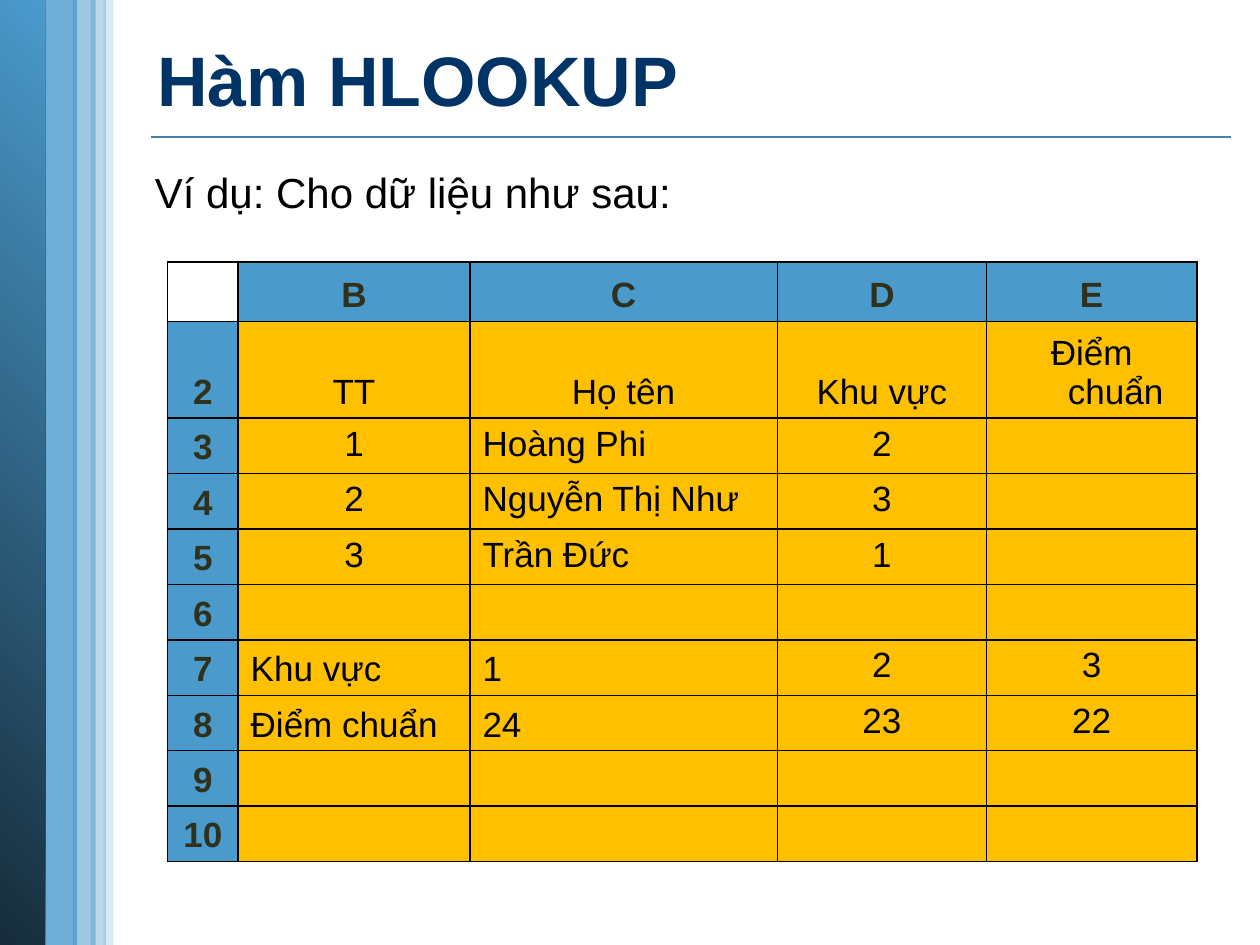
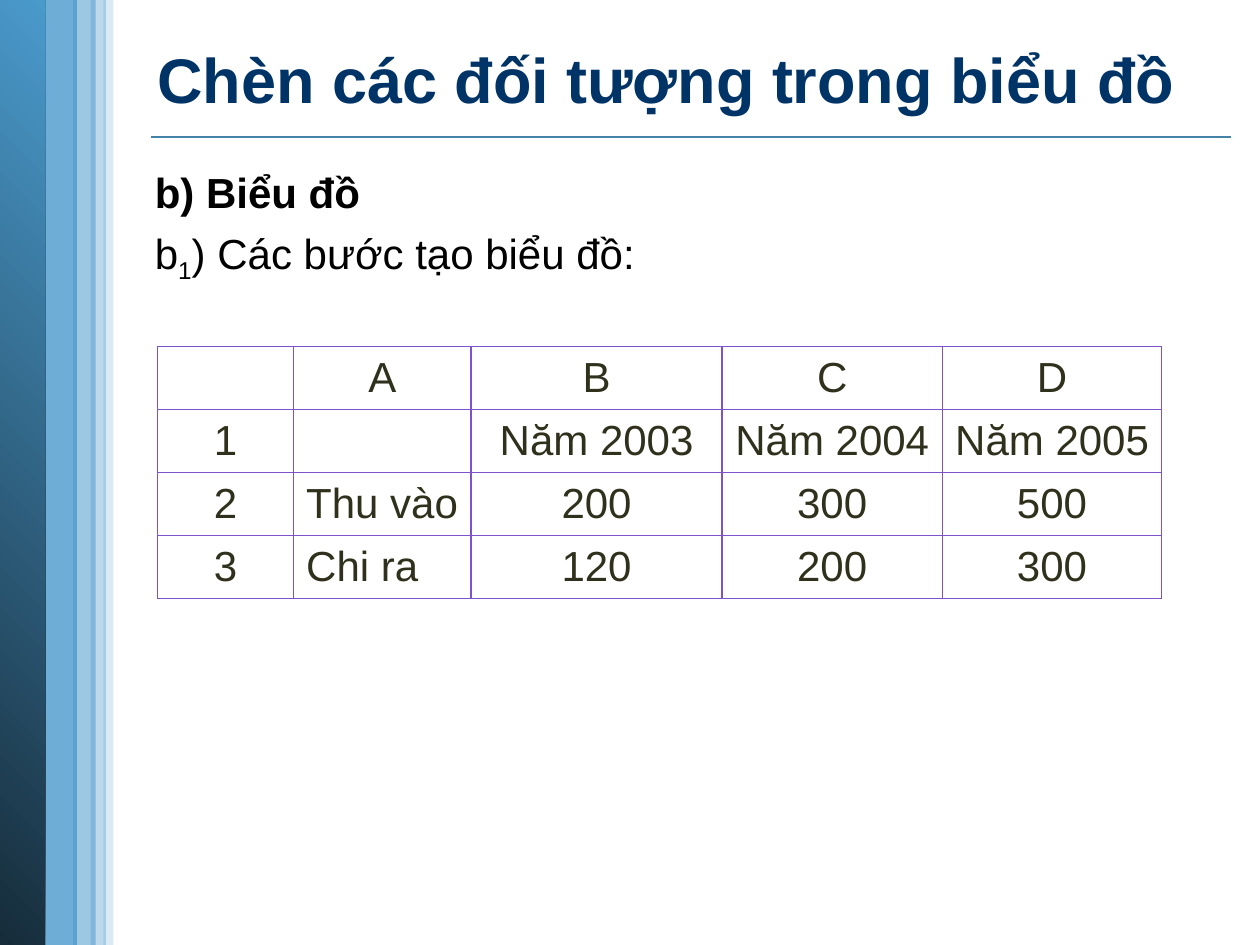
from dataclasses import dataclass
from lxml.etree import SubElement as Sub
from pptx import Presentation
from pptx.dml.color import RGBColor as RGB
from pptx.enum.shapes import MSO_CONNECTOR as Conn, MSO_SHAPE as Shape
from pptx.enum.text import MSO_ANCHOR as Anchor, PP_ALIGN as Align
from pptx.oxml.ns import qn
from pptx.util import Pt

PX = 9144
WIDE, HIGH = 1000, 750
FONT = "Arial"
BLUE = RGB(0x4A, 0x9A, 0xCC)
DARK = RGB(0x16, 0x2C, 0x3A)
RULE = RGB(0x45, 0x82, 0xA7)
NAVY = RGB(0x00, 0x33, 0x66)
BLACK = RGB(0x00, 0x00, 0x00)
OLIVE = RGB(0x30, 0x31, 0x1D)
GOLD = RGB(0xFF, 0xC0, 0x00)
VIOLET = RGB(0x7E, 0x52, 0xCC)
HANG = 38


@dataclass
class Look:
    """The style of one kind of table cell."""
    fill: RGB = None
    ink: RGB = OLIVE
    bold: bool = False
    anchor: Anchor = Anchor.MIDDLE
    align: Align = Align.CENTER
    hang: int = HANG


LOOKS = {
    ".": Look(),
    "s": Look(align=Align.LEFT),
    "h": Look(BLUE, bold=True, anchor=Anchor.BOTTOM),
    "c": Look(GOLD, BLACK, anchor=Anchor.BOTTOM),
    "t": Look(GOLD, BLACK, anchor=Anchor.TOP),
    "j": Look(GOLD, BLACK, anchor=Anchor.TOP, align=Align.JUSTIFY),
    "l": Look(GOLD, BLACK, anchor=Anchor.BOTTOM, align=Align.LEFT, hang=0),
}

SCORES = [
    (".hhhh", ["", "B", "C", "D", "E"]),
    ("hcccc", ["2", "TT", "Họ tên", "Khu vực", "Điểm chuẩn"]),
    ("htjtt", ["3", "1", "Hoàng Phi", "2", ""]),
    ("htjtt", ["4", "2", "Nguyễn Thị Như", "3", ""]),
    ("htjtt", ["5", "3", "Trần Đức", "1", ""]),
    ("htttt", ["6", "", "", "", ""]),
    ("hlltt", ["7", "Khu vực", "1", "2", "3"]),
    ("hlltt", ["8", "Điểm chuẩn", "24", "23", "22"]),
    ("htttt", ["9", "", "", "", ""]),
    ("htttt", ["10", "", "", "", ""]),
]
MONEY = [
    (".....", ["", "A", "B", "C", "D"]),
    (".....", ["1", "", "Năm 2003", "Năm 2004", "Năm 2005"]),
    (".s...", ["2", "Thu vào", "200", "300", "500"]),
    (".s...", ["3", "Chi ra", "120", "200", "300"]),
]


def scale(*nums):
    """Turn px into EMU."""
    return [n * PX for n in nums]


def style(para, size, ink, bold=False):
    """Set the font of a whole paragraph."""
    font = para.font
    font.name, font.size, font.bold = FONT, Pt(size), bold
    font.color.rgb = ink


def band(slide, left, width, alpha=None):
    """Add a full-height stripe, a gradient when no alpha is given."""
    box = slide.shapes.add_shape(Shape.RECTANGLE, *scale(left, 0, width, HIGH))
    box.shadow.inherit = False
    box.line.fill.background()
    if alpha is None:
        box.fill.gradient()
        box.fill.gradient_angle = 45
        for stop, ink, place in zip(box.fill.gradient_stops, (DARK, BLUE), (0, 1)):
            stop.color.rgb, stop.position = ink, place
        return
    box.fill.solid()
    box.fill.fore_color.rgb = BLUE
    tint = box.fill._xPr.find(".//" + qn("a:srgbClr"))
    Sub(tint, qn("a:alpha"), val=str(alpha * 1000))


def frame(slide):
    """Add the title rule and the stripes at the left edge."""
    line = slide.shapes.add_connector(Conn.STRAIGHT, *scale(120, 109, 977, 109))
    line.line.color.rgb, line.line.width = RULE, Pt(1)
    Sub(line._element.spPr, qn("a:effectLst"))
    for args in [(30, 31, 80), (0, 36), (82, 8, 20), (58, 18, 54), (72, 12, 37)]:
        band(slide, *args)


def text(slide, box, anchor=Anchor.TOP):
    """Add a wrapped text box and return its frame."""
    body = slide.shapes.add_textbox(*scale(*box)).text_frame
    body.word_wrap, body.vertical_anchor = True, anchor
    return body


def title(slide, words, size):
    """Add the slide title."""
    para = text(slide, (115, 7, 870, 111), Anchor.MIDDLE).paragraphs[0]
    para.text = words
    style(para, size, NAVY, True)


def notes(slide, paras):
    """Add body paragraphs of (runs, bold), each run with its baseline."""
    body = text(slide, (113, 127, 871, 586))
    for i, (runs, bold) in enumerate(paras):
        para = body.add_paragraph() if i else body.paragraphs[0]
        if i:
            para.space_before = Pt(6)
        style(para, 24, BLACK, bold)
        for words, base in runs:
            run = para.add_run()
            run.text = words
            if base:
                run._r.get_or_add_rPr().set("baseline", str(base * 1000))


def edges(cell, ink):
    """Draw the four borders of a cell."""
    prop = cell._tc.get_or_add_tcPr()
    for side in "LRTB":
        line = Sub(prop, qn("a:ln" + side), w=str(Pt(1)))
        Sub(Sub(line, qn("a:solidFill")), qn("a:srgbClr"), val=str(ink))


def paint(cell, words, look, size, edge):
    """Style and fill one table cell."""
    edges(cell, edge)
    if look.fill is None:
        cell.fill.background()
    else:
        cell.fill.solid()
        cell.fill.fore_color.rgb = look.fill
    cell.vertical_anchor = look.anchor
    if not words:
        return
    para = cell.text_frame.paragraphs[0]
    para.text, para.alignment = words, look.align
    if look.hang:
        prop = para._p.get_or_add_pPr()
        prop.set("marL", str(look.hang * PX))
        prop.set("indent", str(-look.hang * PX))
    style(para, size, look.ink, look.bold)


def grid(slide, left, top, cols, rows, data, size, edge):
    """Add a table whose rows are (look keys, texts)."""
    box = scale(left, top, sum(cols), sum(rows))
    table = slide.shapes.add_table(len(rows), len(cols), *box).table
    table.first_row = table.horz_banding = False
    for col, width in zip(table.columns, scale(*cols)):
        col.width = width
    for row, high, (keys, words) in zip(table.rows, scale(*rows), data):
        row.height = high
        for cell, key, word in zip(row.cells, keys, words):
            paint(cell, word, LOOKS[key], size, edge)


def lookup(slide):
    """Build the slide on the lookup function."""
    title(slide, "Hàm HLOOKUP", 40)
    notes(slide, [([("Ví dụ: Cho dữ liệu như sau:", 0)], False)])
    grid(slide, 133, 208, [56, 184, 244, 166, 167], [47, 77] + [44] * 8,
         SCORES, 20, BLACK)


def chart(slide):
    """Build the slide on the data for a chart."""
    title(slide, "Chèn các đối tượng trong biểu đồ", 36)
    steps = [("b", 0), ("1", -25), (") Các bước tạo biểu đồ:", 0)]
    notes(slide, [([("b) Biểu đồ", 0)], True), (steps, False)])
    grid(slide, 125, 275, [108, 141, 199, 175, 174], [47] * 4, MONEY, 24, VIOLET)


def main():
    """Build and save the deck."""
    deck = Presentation()
    deck.slide_width, deck.slide_height = scale(WIDE, HIGH)
    for build in (lookup, chart):
        slide = deck.slides.add_slide(deck.slide_layouts[6])
        frame(slide)
        build(slide)
    deck.save("out.pptx")


if __name__ == "__main__":
    main()
